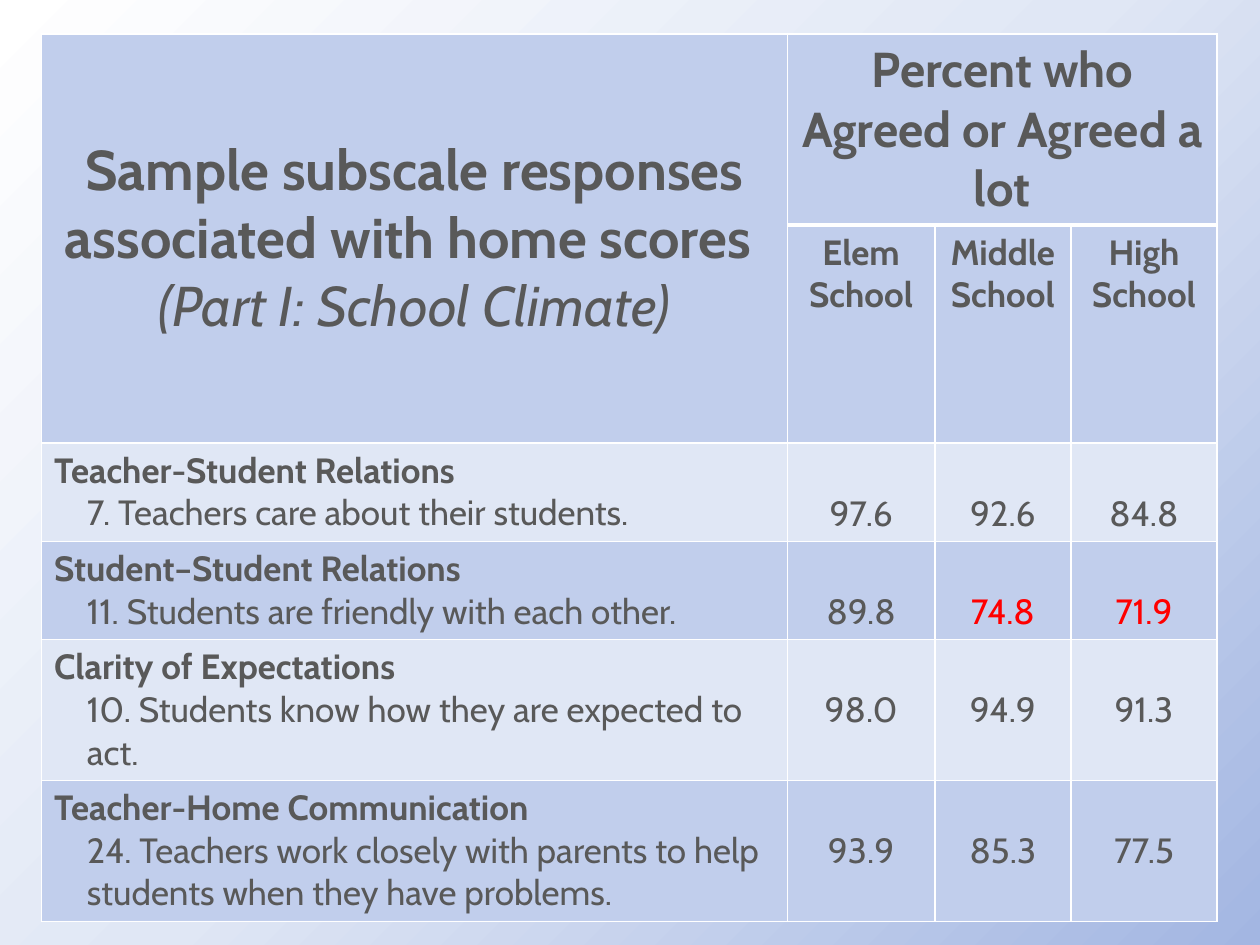
from pptx import Presentation
from pptx.dml.color import RGBColor
from pptx.enum.text import MSO_ANCHOR, PP_ALIGN
from pptx.oxml import parse_xml
from pptx.oxml.ns import nsdecls
from pptx.util import Inches, Pt

COLORS = {
    "text": "595959",
    "alert": "FF0000",
    "header": "C1CEEC",
    "light": "E0E7F5",
    "border": "FFFFFF",
    "glow": "A3B6E2",
}
FONT = "Cabin"
COLUMN_WIDTHS = [5.92, 1.17, 1.08, 1.16]
ROW_HEIGHTS = [1.51, 1.73, 0.78, 0.78, 1.11, 1.12]
HEADER_ROWS = 2
ITEM_INDENT = 0.26
VALUE_TOP_MARGIN = 0.39  # lowers each value to the line of its survey item
ALERT_BELOW = 75

SCHOOLS = ["Elem\nSchool", "Middle School", "High School"]
SUBSCALES = [
    ("Teacher-Student Relations",
     "7. Teachers care about their students.", [97.6, 92.6, 84.8]),
    ("Student–Student Relations",
     "11. Students are friendly with each other.", [89.8, 74.8, 71.9]),
    ("Clarity of Expectations",
     "10. Students know how they are expected to act.", [98.0, 94.9, 91.3]),
    ("Teacher-Home Communication",
     "24. Teachers work closely with parents to help students when they have problems.",
     [93.9, 85.3, 77.5]),
]


def write_text(cell, text, size, bold=True, color="text", centered=True):
    cell.text_frame.text = text
    for paragraph in cell.text_frame.paragraphs:
        paragraph.alignment = PP_ALIGN.CENTER if centered else PP_ALIGN.LEFT
        for run in paragraph.runs:
            run.font.name = FONT
            run.font.size = Pt(size)
            run.font.bold = bold
            run.font.color.rgb = RGBColor.from_string(COLORS[color])


def add_border(cell, side, width):
    """Draw one cell side, named L, R, T or B; call before the fill is set."""
    cell._tc.get_or_add_tcPr().append(parse_xml(
        f'<a:ln{side} {nsdecls("a")} w="{Pt(width)}"><a:solidFill>'
        f'<a:srgbClr val="{COLORS["border"]}"/></a:solidFill></a:ln{side}>'))


presentation = Presentation()
presentation.slide_width = Inches(10)
presentation.slide_height = Inches(7.5)
slide = presentation.slides.add_slide(presentation.slide_layouts[6])

# Background: circular gradient spreading from the bottom right corner
stops = "".join(
    f'<a:gs pos="{position * 1000}"><a:srgbClr val="{COLORS[name]}"/></a:gs>'
    for position, name in [(0, "glow"), (50, "light"), (100, "border")])
slide._element.cSld.insert(0, parse_xml(
    f'<p:bg {nsdecls("p", "a")}><p:bgPr><a:gradFill rotWithShape="1">'
    f'<a:gsLst>{stops}</a:gsLst><a:path path="circle">'
    '<a:fillToRect l="100000" t="100000"/></a:path></a:gradFill>'
    '<a:effectLst/></p:bgPr></p:bg>'))

# Table grid
table = slide.shapes.add_table(
    len(ROW_HEIGHTS), len(COLUMN_WIDTHS), Inches(0.33), Inches(0.27),
    Inches(sum(COLUMN_WIDTHS)), Inches(sum(ROW_HEIGHTS))).table
for column, width in zip(table.columns, COLUMN_WIDTHS):
    column.width = Inches(width)
for row, height in zip(table.rows, ROW_HEIGHTS):
    row.height = Inches(height)

# Borders and banded fills, with a thick rule under the percent heading
for row_index in range(len(ROW_HEIGHTS)):
    for column_index in range(len(COLUMN_WIDTHS)):
        cell = table.cell(row_index, column_index)
        for side in "LRTB":
            thick = column_index > 0 and (row_index, side) in [(0, "B"), (1, "T")]
            add_border(cell, side, 3 if thick else 1)
        is_light = row_index >= HEADER_ROWS and row_index % 2 == 0
        cell.fill.solid()
        cell.fill.fore_color.rgb = RGBColor.from_string(
            COLORS["light" if is_light else "header"])

# Header
title = table.cell(0, 0)
title.merge(table.cell(1, 0))
title.vertical_anchor = MSO_ANCHOR.MIDDLE
write_text(title, "Sample subscale responses associated with home scores \v"
                  "(Part I: School Climate)", 32)
subtitle_run = title.text_frame.paragraphs[0].runs[-1]
subtitle_run.font.bold = False
subtitle_run.font.italic = True

percent_heading = table.cell(0, 1)
percent_heading.merge(table.cell(0, 3))
write_text(percent_heading, "Percent who Agreed or Agreed a lot", 28)
for column_index, school in enumerate(SCHOOLS, start=1):
    write_text(table.cell(1, column_index), school, 20)

# Subscale rows
for row_index, (subscale, item, values) in enumerate(SUBSCALES, start=HEADER_ROWS):
    label = table.cell(row_index, 0)
    write_text(label, f"{subscale}\n{item}", 20, centered=False)
    item_paragraph = label.text_frame.paragraphs[1]
    item_paragraph.runs[0].font.bold = False
    item_paragraph._p.get_or_add_pPr().set("marL", str(Inches(ITEM_INDENT)))
    for column_index, value in enumerate(values, start=1):
        cell = table.cell(row_index, column_index)
        cell.margin_top = Inches(VALUE_TOP_MARGIN)
        write_text(cell, f"{value:.1f}", 20, bold=False,
                   color="alert" if value < ALERT_BELOW else "text")

presentation.save("out.pptx")
